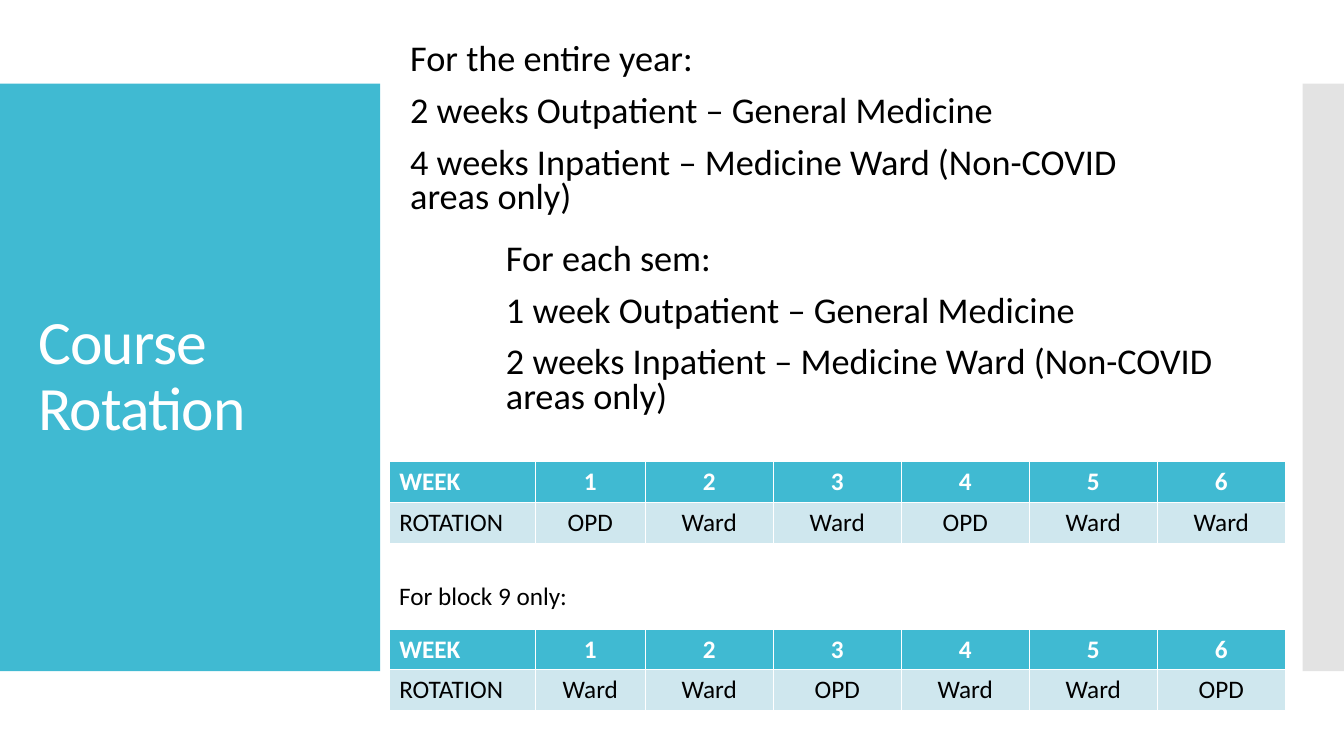
from dataclasses import dataclass

from lxml.etree import SubElement
from pptx import Presentation
from pptx.dml.color import RGBColor
from pptx.enum.shapes import MSO_SHAPE as Shape
from pptx.enum.text import MSO_ANCHOR as Anchor, PP_ALIGN as Align
from pptx.oxml.ns import qn
from pptx.util import Inches, Pt


@dataclass(frozen=True)
class Theme:
    font: str = "Calibri"
    accent: RGBColor = RGBColor(0x40, 0xBA, 0xD2)
    pale: RGBColor = RGBColor(0xCF, 0xE7, 0xEE)
    grey: RGBColor = RGBColor(0xC8, 0xC8, 0xC8)
    white: RGBColor = RGBColor(0xFF, 0xFF, 0xFF)
    black: RGBColor = RGBColor(0, 0, 0)
    title_size: float = 44
    body_size: float = 25.9
    table_size: float = 18


THEME = Theme()
COLUMN_WIDTHS = [1.45, 1.09] + [1.27] * 5
ROW_HEIGHT = 0.405


def add_panel(page, left, width, color, opacity=100):
    panel = page.shapes.add_shape(
        Shape.RECTANGLE, Inches(left), Inches(0.83), Inches(width), Inches(5.83))
    panel.shadow.inherit = False
    panel.line.fill.background()
    panel.fill.solid()
    panel.fill.fore_color.rgb = color
    if opacity < 100:
        color_node = panel.fill._xPr.find(qn("a:solidFill"))[0]
        SubElement(color_node, qn("a:alpha")).set("val", str(opacity * 1000))


def style_paragraph(para, size, color, bold=False):
    para.font.name = THEME.font
    para.font.size = Pt(size)
    para.font.color.rgb = color
    para.font.bold = bold


def add_text(page, left, top, width, height, lines, size, color,
             anchor=Anchor.MIDDLE, line_spacing=1.0, space_before=0):
    box = page.shapes.add_textbox(
        Inches(left), Inches(top), Inches(width), Inches(height))
    frame = box.text_frame
    frame.word_wrap = True
    frame.vertical_anchor = anchor
    frame.text = "\n".join(lines)
    for para in frame.paragraphs:
        style_paragraph(para, size, color)
        para.line_spacing = line_spacing
        para.space_before = Pt(space_before)
    return frame


def add_title(page, text):
    frame = add_text(page, 0.28, 1.23, 3.22, 5.03, [text],
                     THEME.title_size, THEME.white, line_spacing=0.9)
    span = frame.paragraphs[0].runs[0]
    span.font._element.set("spc", "-60")


def add_plan(page, left, top, lines):
    add_text(page, left, top, 8, 1.97, lines, THEME.body_size, THEME.black,
             line_spacing=0.8, space_before=12)


def add_rotation_table(page, top, rotations):
    rows = [["WEEK", *map(str, range(1, len(rotations) + 1))],
            ["ROTATION", *rotations]]
    table = page.shapes.add_table(
        len(rows), len(COLUMN_WIDTHS), Inches(3.86), Inches(top),
        Inches(sum(COLUMN_WIDTHS)), Inches(ROW_HEIGHT * len(rows))).table
    for column, width in zip(table.columns, COLUMN_WIDTHS):
        column.width = Inches(width)
    for row_index, texts in enumerate(rows):
        header = row_index == 0
        for column_index, text in enumerate(texts):
            cell = table.cell(row_index, column_index)
            cell.fill.solid()
            cell.fill.fore_color.rgb = THEME.accent if header else THEME.pale
            cell.text = text
            para = cell.text_frame.paragraphs[0]
            para.alignment = Align.CENTER if column_index else Align.LEFT
            style_paragraph(para, THEME.table_size,
                            THEME.white if header else THEME.black, header)


def main():
    deck = Presentation()
    deck.slide_width = Inches(13.33)
    deck.slide_height = Inches(7.5)
    page = deck.slides.add_slide(deck.slide_layouts[6])

    add_panel(page, 0, 3.77, THEME.accent)
    add_panel(page, 12.92, 0.41, THEME.grey, opacity=50)
    add_title(page, "Course Rotation")
    add_plan(page, 3.97, 0.31, [
        "For the entire year:",
        "2 weeks Outpatient – General Medicine",
        "4 weeks Inpatient – Medicine Ward (Non-COVID areas only)"])
    add_plan(page, 4.92, 2.29, [
        "For each sem:",
        "1 week Outpatient – General Medicine",
        "2 weeks Inpatient – Medicine Ward (Non-COVID areas only)"])
    add_rotation_table(page, 4.58, ["OPD", "Ward", "Ward"] * 2)
    add_rotation_table(page, 6.24, ["Ward", "Ward", "OPD"] * 2)
    add_text(page, 3.86, 5.71, 6.67, 0.4, ["For block 9 only:"],
             THEME.table_size, THEME.black, anchor=Anchor.TOP)

    deck.save("out.pptx")


if __name__ == "__main__":
    main()
